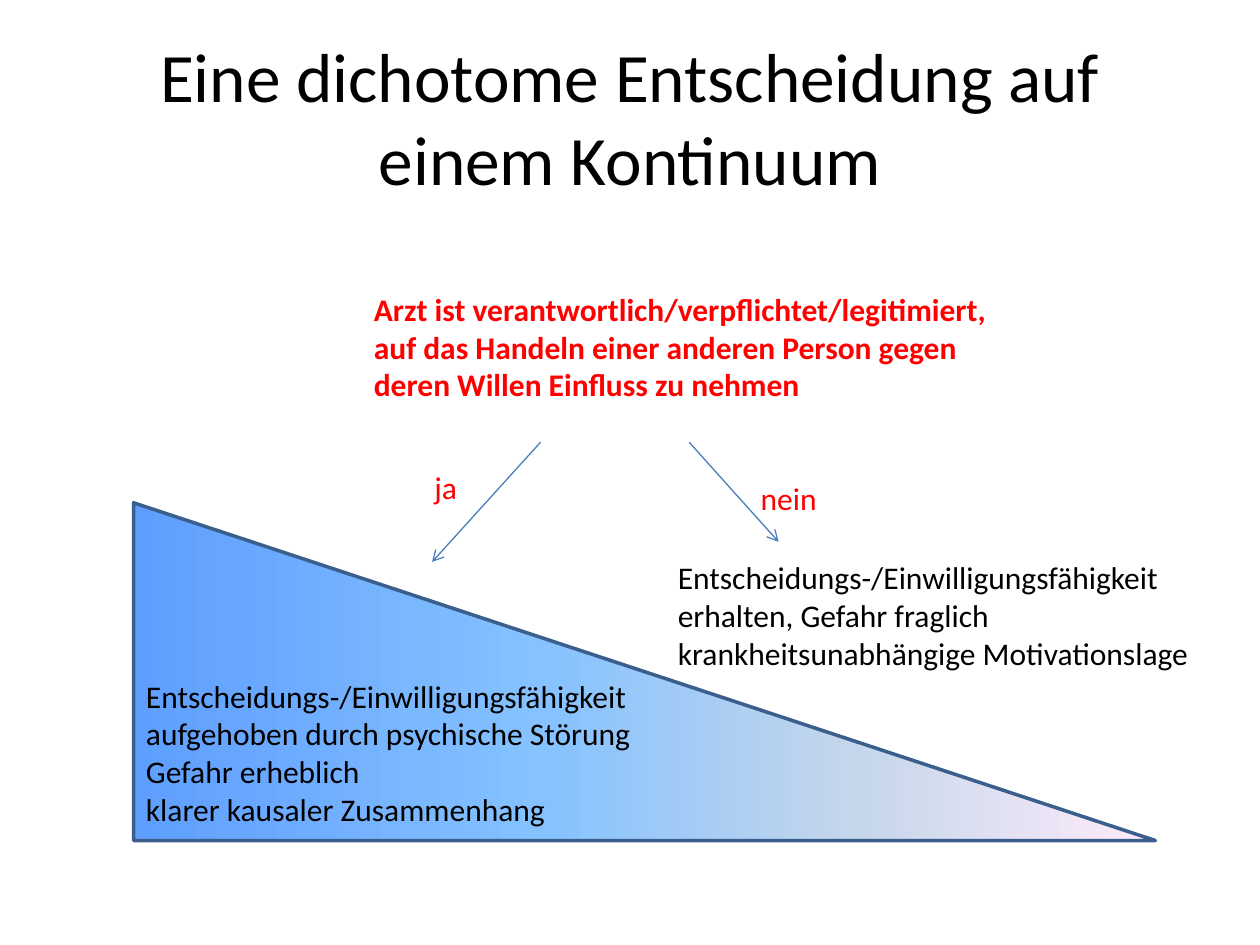
from pptx import Presentation
from pptx.dml.color import RGBColor
from pptx.enum import shapes, text
from pptx.oxml import ns
from pptx.util import Pt
from lxml import etree

FONT = "Calibri"
COLORS = {"black": "000000", "red": "FF0000", "outline": "3A5F8C", "arrow": "4B7EBC"}
# Gradient stops: position in percent -> colour
CONTINUUM = {0: "5E9EFF", 40: "85C2FF", 70: "C4D6EB", 100: "FFEBFA"}


def rgb(name):
    return RGBColor.from_string(COLORS[name])


def add_text(page, box, lines, color="black", size=18, bold=False,
             align=text.PP_ALIGN.LEFT, anchor=text.MSO_ANCHOR.TOP):
    frame = page.shapes.add_textbox(*map(Pt, box)).text_frame
    frame.word_wrap = True
    frame.vertical_anchor = anchor
    frame.text = "\n".join(lines)
    for para in frame.paragraphs:
        para.alignment = align
        para.font.name = FONT
        para.font.size = Pt(size)
        para.font.bold = bold
        para.font.color.rgb = rgb(color)


def add_arrow(page, start, end):
    arrow = page.shapes.add_connector(
        shapes.MSO_CONNECTOR.STRAIGHT, *map(Pt, (*start, *end)))
    arrow.line.color.rgb = rgb("arrow")
    arrow.line.width = Pt(0.75)
    properties = arrow._element.spPr
    line = properties.find(ns.qn("a:ln"))
    etree.SubElement(line, ns.qn("a:tailEnd"), type="arrow")
    etree.SubElement(properties, ns.qn("a:effectLst"))


def fill_gradient(shape, stops):
    shape.fill.gradient()
    shape.fill.gradient_angle = 0
    stop_list = shape._element.spPr.find(".//" + ns.qn("a:gsLst"))
    for stop in list(stop_list):
        stop_list.remove(stop)
    for percent, color in stops.items():
        stop = etree.SubElement(stop_list, ns.qn("a:gs"), pos=str(percent * 1000))
        etree.SubElement(stop, ns.qn("a:srgbClr"), val=color)


def add_title(page, box):
    add_text(page, box, ["Eine dichotome Entscheidung auf einem Kontinuum"],
             size=39.6, align=text.PP_ALIGN.CENTER, anchor=text.MSO_ANCHOR.MIDDLE)


def add_continuum(page, box):
    left, top, width, height = box
    # Wedge falling from severe to doubtful danger
    wedge = page.shapes.add_shape(
        shapes.MSO_SHAPE.RIGHT_TRIANGLE, *map(Pt, box))
    wedge.shadow.inherit = False
    fill_gradient(wedge, CONTINUUM)
    wedge.line.color.rgb = rgb("outline")
    wedge.line.width = Pt(2)

    # Descriptions of both ends
    add_text(page, (left, top + 95.8, 294.5, 94.3), [
        "Entscheidungs-/Einwilligungsfähigkeit aufgehoben durch psychische Störung",
        "Gefahr erheblich",
        "klarer kausaler Zusammenhang"])
    add_text(page, (left + 303.9, top + 28.1, 339.8, 72.7), [
        "Entscheidungs-/Einwilligungsfähigkeit erhalten, Gefahr fraglich",
        "krankheitsunabhängige Motivationslage"])


def add_decision(page, box):
    left, top, width, height = box
    # Question
    add_text(page, (left, top, width, 72.7), [
        "Arzt ist verantwortlich/verpflichtet/legitimiert, auf das Handeln "
        "einer anderen Person gegen deren Willen Einfluss zu nehmen"],
        color="red", bold=True)

    # Branches: answer, arrow start x, arrow end, label box
    branches = [
        ("ja", 102.3, (40.3, height), (34.6, 102.2, 62.6, 28.8)),
        ("nein", 187.2, (238.3, 147.6), (221, 108, 67.7, 28.8)),
    ]
    for answer, start_x, (end_x, end_y), (x, y, w, h) in branches:
        add_arrow(page, (left + start_x, top + 90.7), (left + end_x, top + end_y))
        add_text(page, (left + x, top + y, w, h), [answer], color="red")


def main():
    deck = Presentation()
    deck.slide_width, deck.slide_height = Pt(720), Pt(540)
    page = deck.slides.add_slide(deck.slide_layouts[6])
    add_title(page, (36, 21.6, 648, 90))
    add_continuum(page, (76.3, 287.3, 583.9, 193))
    add_decision(page, (206.6, 162, 374.4, 159.1))
    deck.save("out.pptx")


if __name__ == "__main__":
    main()
